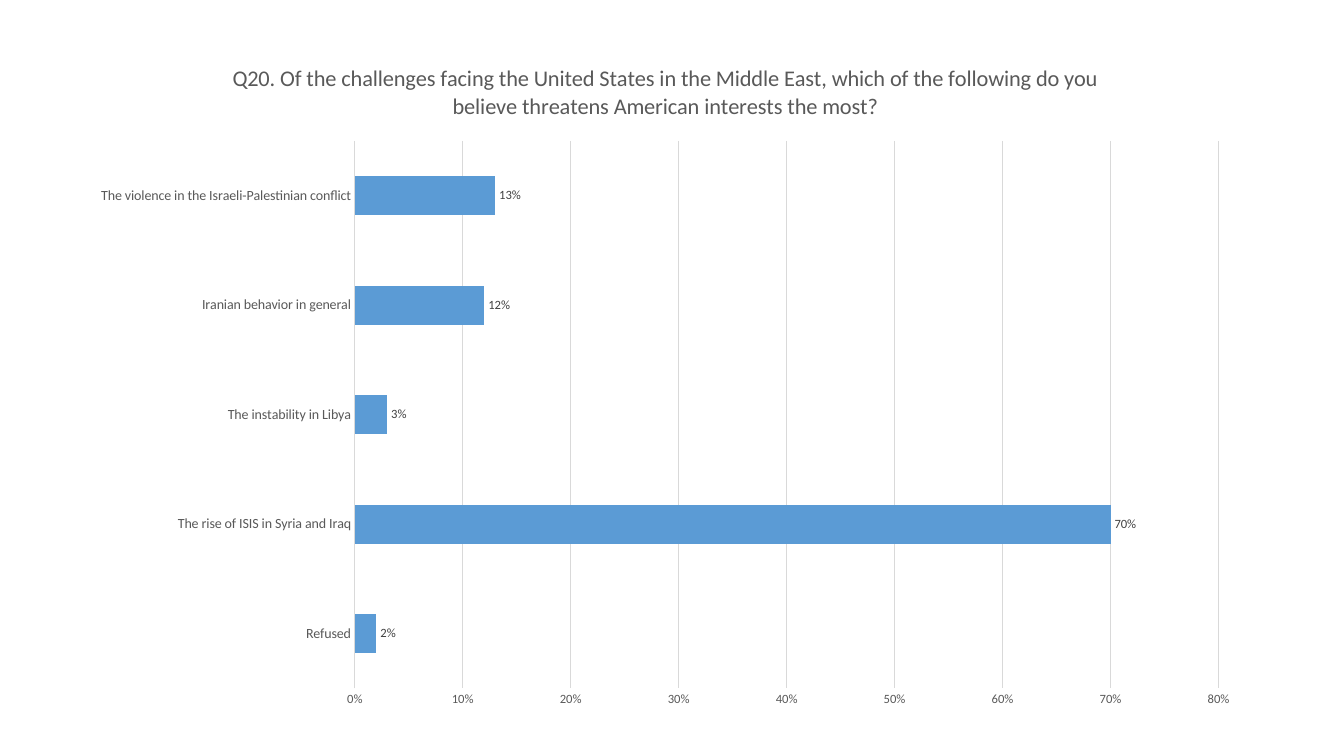
from pptx import Presentation
from pptx.chart.data import CategoryChartData
from pptx.dml.color import RGBColor
from pptx.enum import chart as kinds
from pptx.util import Pt

COLORS = {"bar": "5B9BD5", "text": "595959", "value": "404040", "grid": "D9D9D9", "base": "000000"}
QUESTION = (
    "Q20. Of the challenges facing the United States in the Middle East, "
    "which of the following do you believe threatens American interests the most?"
)
ANSWERS = {
    "Refused": 0.02,
    "The rise of ISIS in Syria and Iraq": 0.7,
    "The instability in Libya": 0.03,
    "Iranian behavior in general": 0.12,
    "The violence in the Israeli-Palestinian conflict": 0.13,
}


def color(name):
    return RGBColor.from_string(COLORS[name])


def set_values(target, values):
    for name, value in values.items():
        setattr(target, name, value)


def style_font(font, size, name):
    set_values(font, {"name": "Calibri", "size": Pt(size), "bold": False})
    font.color.rgb = color(name)


def style_line(line):
    line.color.rgb = color("grid")
    line.width = Pt(0.75)


def add_title(chart, wording):
    chart.has_title = True
    chart.chart_title.include_in_layout = False
    para = chart.chart_title.text_frame.paragraphs[0]
    span = para.add_run()
    span.text = wording
    style_font(span.font, 16, "text")


def style_axes(chart):
    answers, shares = chart.category_axis, chart.value_axis
    for axis, size in ((answers, 10), (shares, 9)):
        set_values(axis, {
            "major_tick_mark": kinds.XL_TICK_MARK.NONE,
            "minor_tick_mark": kinds.XL_TICK_MARK.NONE,
        })
        style_font(axis.tick_labels.font, size, "text")
    style_line(answers.format.line)
    set_values(shares, {
        "minimum_scale": 0,
        "maximum_scale": 0.8,
        "major_unit": 0.1,
        "has_major_gridlines": True,
    })
    style_line(shares.major_gridlines.format.line)
    shares.format.line.fill.background()
    set_values(shares.tick_labels, {"number_format": "0%", "number_format_is_linked": False})


def style_bars(chart):
    plot = chart.plots[0]
    set_values(plot, {"gap_width": 182, "vary_by_categories": False})
    series = plot.series[0]
    series.invert_if_negative = False
    series.format.fill.solid()
    series.format.fill.fore_color.rgb = color("bar")
    labels = series.data_labels
    set_values(labels, {
        "show_value": True,
        "number_format": "0%",
        "number_format_is_linked": False,
        "position": kinds.XL_LABEL_POSITION.OUTSIDE_END,
    })
    style_font(labels.font, 9, "value")


def add_bar_chart(page, answers, left, top, width, height):
    data = CategoryChartData(number_format="0%")
    data.categories = list(answers)
    data.add_series("Series 1", list(answers.values()))
    frame = page.shapes.add_chart(
        kinds.XL_CHART_TYPE.BAR_CLUSTERED, Pt(left), Pt(top), Pt(width), Pt(height), data
    )
    chart = frame.chart
    chart.has_legend = False
    style_font(chart.font, 10, "base")
    return chart


def main():
    deck = Presentation()
    set_values(deck, {"slide_width": Pt(960), "slide_height": Pt(540)})
    page = deck.slides.add_slide(deck.slide_layouts[6])
    chart = add_bar_chart(page, ANSWERS, 55.5, 28.8, 839.5, 486)
    add_title(chart, QUESTION)
    style_axes(chart)
    style_bars(chart)
    deck.save("out.pptx")


if __name__ == "__main__":
    main()
